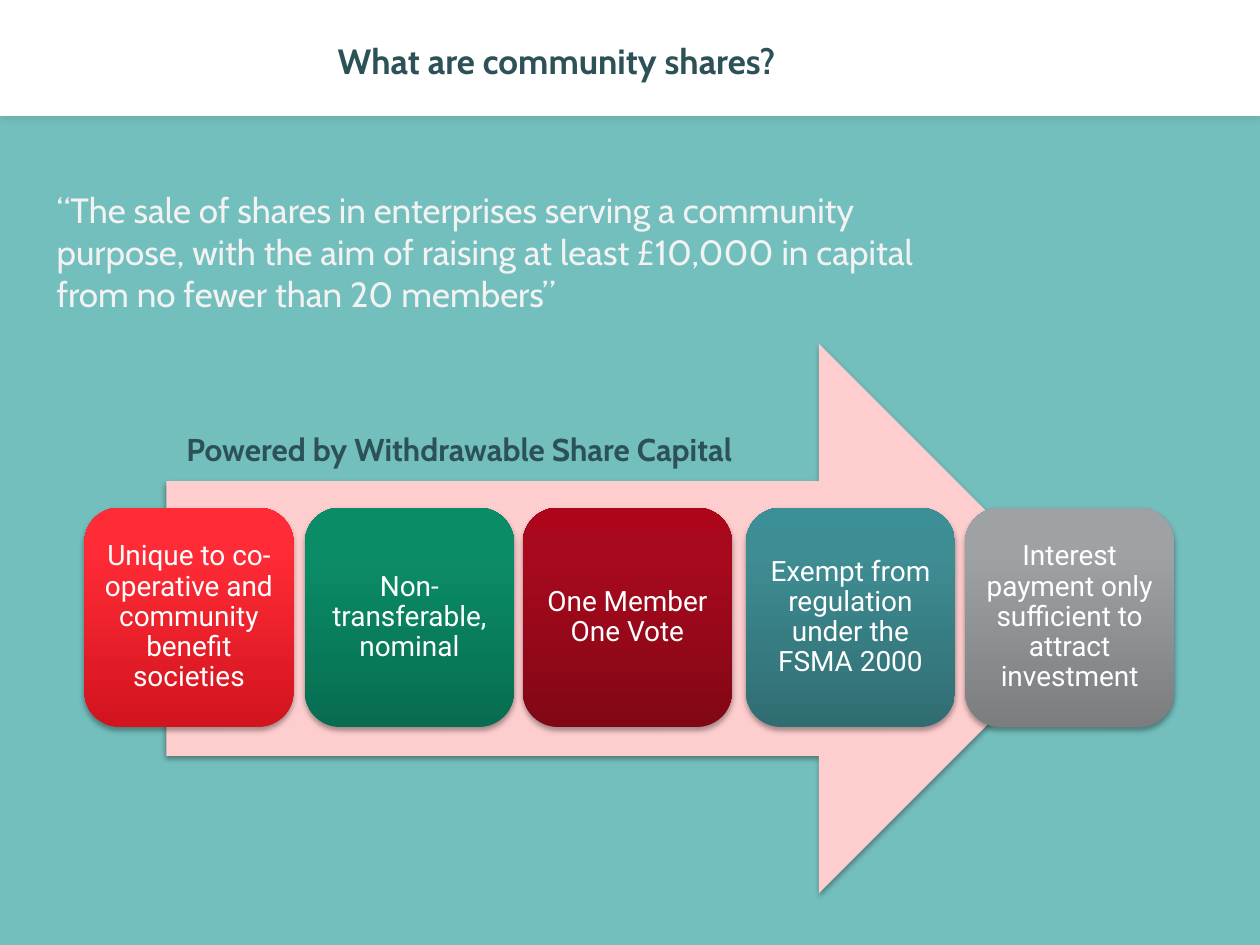
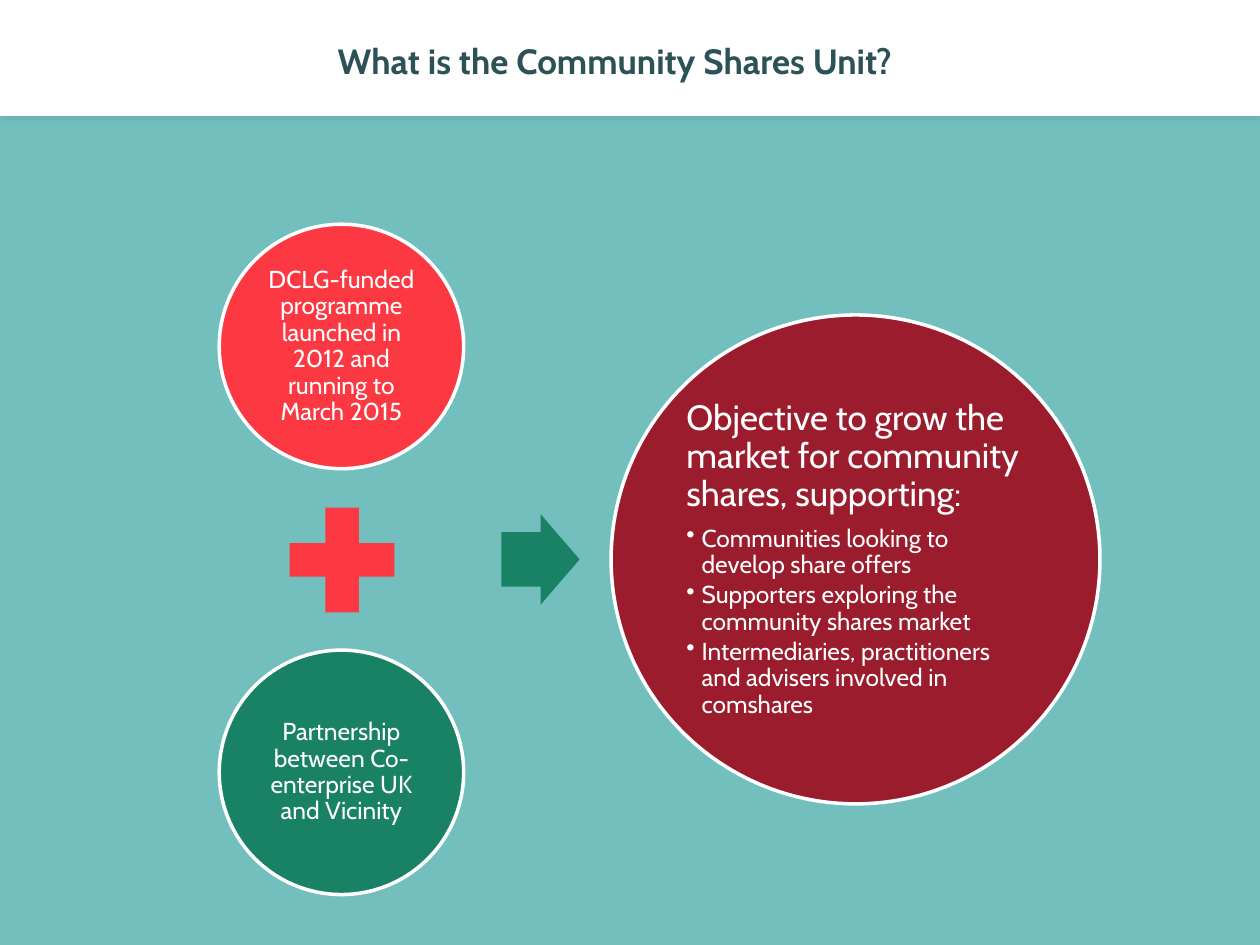
import copy

import lxml.etree
import pptx
import pptx.dml.color
import pptx.enum.shapes
import pptx.enum.text
import pptx.oxml.ns
import pptx.util

EMU_PER_PX = 9144  # 100 px to the inch
SHAPES = pptx.enum.shapes.MSO_SHAPE
ALIGN = pptx.enum.text.PP_ALIGN
ANCHOR = pptx.enum.text.MSO_ANCHOR
qn = pptx.oxml.ns.qn

COLOURS = {
    "background": "73BFBD",
    "white": "FFFFFF",
    "heading": "2C5258",
    "quote": "F2F2F2",
    "pale pink": "FECECF",
    "red": "FC3842",
    "green": "1A8264",
    "burgundy": "9B1C2C",
}
# Each card: left edge, text, gradient from bottom to top
CARDS = [
    (67, "Unique to co-operative and community benefit societies", ("D2141E", "FF2B36", "FF2D38")),
    (242, "Non-transferable, nominal", ("086D50", "0A8D67", "089069")),
    (415, "One Member One Vote", ("820716", "A9091D", "AD061B")),
    (592, "Exempt from regulation under the FSMA 2000", ("306D72", "3E8D93", "3C8F96")),
    (766, "Interest payment only sufficient to attract investment", ("7B7D7F", "9FA2A5", "A0A2A6")),
]
GRADIENT_POSITIONS = (0, 0.8, 1)
SUPPORTED_GROUPS = [
    "Communities looking to develop share offers",
    "Supporters exploring the community shares market",
    "Intermediaries, practitioners and advisers involved in comshares",
]


def px(length):
    return pptx.util.Emu(length * EMU_PER_PX)


def rgb(hex_colour):
    return pptx.dml.color.RGBColor.from_string(hex_colour)


class Deck:
    font = "Cabin"

    def __init__(self):
        self.presentation = pptx.Presentation()
        self.presentation.slide_width = px(1000)
        self.presentation.slide_height = px(750)
        fill = self.presentation.slide_master.background.fill
        fill.solid()
        fill.fore_color.rgb = rgb(COLOURS["background"])
        self.slide = None

    def add_slide(self, heading):
        """Start a slide with the white band behind its title."""
        self.slide = self.presentation.slides.add_slide(self.presentation.slide_layouts[5])
        band = self.shape(SHAPES.RECTANGLE, (0, 0, 1000, 92), "white")
        self.shadow(band, 5)
        title = self.slide.shapes.title
        title._element.addprevious(band._element)
        title.left, title.top, title.width, title.height = map(px, (258, 17, 683, 62))
        frame = self.frame(title, ANCHOR.MIDDLE)
        self.set_text(frame.paragraphs[0], heading, 20, "heading", bold=True)

    def frame(self, shape, anchor, margin=None):
        frame = shape.text_frame
        frame.word_wrap = True
        frame.auto_size = pptx.enum.text.MSO_AUTO_SIZE.NONE
        frame.vertical_anchor = anchor
        if margin is not None:
            frame.margin_left = frame.margin_right = px(margin)
            frame.margin_top = frame.margin_bottom = px(margin)
        return frame

    def set_text(self, paragraph, text, size, colour="white", bold=False, font=None, align=ALIGN.LEFT):
        paragraph.text = text
        paragraph.alignment = align
        paragraph.font.name = font or self.font
        paragraph.font.size = pptx.util.Pt(size)
        paragraph.font.bold = bold
        paragraph.font.color.rgb = rgb(COLOURS[colour])

    def set_tight_text(self, paragraph, text, size, gap=0.35, **style):
        """Set text with close lines and a gap after, given as a share of the size."""
        self.set_text(paragraph, text, size, **style)
        paragraph.line_spacing = 0.9
        paragraph.space_after = pptx.util.Pt(round(size * gap, 1))

    def text(self, box, text, size, colour, bold=False):
        textbox = self.slide.shapes.add_textbox(*map(px, box))
        frame = self.frame(textbox, ANCHOR.TOP)
        self.set_text(frame.paragraphs[0], text, size, colour, bold)

    def shape(self, kind, box, colour):
        shape = self.slide.shapes.add_shape(kind, *map(px, box))
        shape.shadow.inherit = False
        shape.fill.solid()
        shape.fill.fore_color.rgb = rgb(COLOURS[colour])
        shape.line.fill.background()
        return shape

    def shadow(self, shape, opacity):
        effects = shape._element.spPr.find(qn("a:effectLst"))
        outer = lxml.etree.SubElement(
            effects, qn("a:outerShdw"), blurRad="39370", dist="22860",
            dir="5400000", algn="t", rotWithShape="0")
        colour = lxml.etree.SubElement(outer, qn("a:srgbClr"), val="000000")
        lxml.etree.SubElement(colour, qn("a:alpha"), val=str(opacity * 1000))

    def gradient(self, shape, hex_colours):
        shape.fill.gradient()
        shape.fill.gradient_angle = 90
        first_stop = shape._element.spPr.find(".//" + qn("a:gs"))
        first_stop.addnext(copy.deepcopy(first_stop))
        for stop, position, colour in zip(shape.fill.gradient_stops, GRADIENT_POSITIONS, hex_colours):
            stop.position = position
            stop.color.rgb = rgb(colour)

    def card(self, left, text, hex_colours):
        card = self.shape(SHAPES.ROUNDED_RECTANGLE, (left, 403, 166, 174), "white")
        self.gradient(card, hex_colours)
        self.shadow(card, 35)
        frame = self.frame(card, ANCHOR.MIDDLE, 7)
        self.set_tight_text(frame.paragraphs[0], text, 16, font="Roboto", align=ALIGN.CENTER)

    def circle(self, left, top, diameter, colour, text, size, margin, align=ALIGN.CENTER):
        circle = self.shape(SHAPES.OVAL, (left, top, diameter, diameter), colour)
        circle.line.color.rgb = rgb(COLOURS["white"])
        circle.line.width = pptx.util.Pt(2)
        frame = self.frame(circle, ANCHOR.MIDDLE, margin)
        self.set_tight_text(frame.paragraphs[0], text, size, align=align)
        return frame

    def bullet(self, frame, text, size):
        paragraph = frame.add_paragraph()
        paragraph.level = 1
        properties = paragraph._p.get_or_add_pPr()
        properties.set("marL", str(px(12)))
        properties.set("indent", str(-px(12)))
        lxml.etree.SubElement(properties, qn("a:buChar"), char="•")
        self.set_tight_text(paragraph, text, size, gap=0.15)


def add_community_shares(deck):
    deck.add_slide("What are community shares?")
    deck.text(
        (35, 145, 701, 111),
        "“The sale of shares in enterprises serving a community purpose, with the aim of "
        "raising at least £10,000 in capital from no fewer than 20 members”",
        20, "quote")
    arrow = deck.shape(SHAPES.RIGHT_ARROW, (132, 273, 736, 436), "pale pink")
    deck.shadow(arrow, 35)
    for left, text, hex_colours in CARDS:
        deck.card(left, text, hex_colours)
    deck.text((138, 336, 571, 71), "Powered by Withdrawable Share Capital", 18, "heading", bold=True)


def add_shares_unit(deck):
    deck.add_slide("What is the Community Shares Unit?")
    deck.circle(174, 178, 194, "red",
                "DCLG-funded programme launched in 2012 and running to March 2015", 14, 2)
    deck.shape(SHAPES.MATH_PLUS, (215, 388, 113, 113), "red")
    deck.circle(174, 516, 194, "green",
                "Partnership between Co-enterprise UK and Vicinity", 14, 2)
    arrow = deck.shape(SHAPES.RIGHT_ARROW, (398, 408, 62, 72), "green")
    arrow.adjustments[0] = 0.6
    objective = deck.circle(
        485, 250, 388, "burgundy",
        "Objective to grow the market for community shares, supporting:", 20, 3, ALIGN.LEFT)
    for group in SUPPORTED_GROUPS:
        deck.bullet(objective, group, 14)


def main():
    deck = Deck()
    add_community_shares(deck)
    add_shares_unit(deck)
    deck.presentation.save("out.pptx")


if __name__ == "__main__":
    main()
